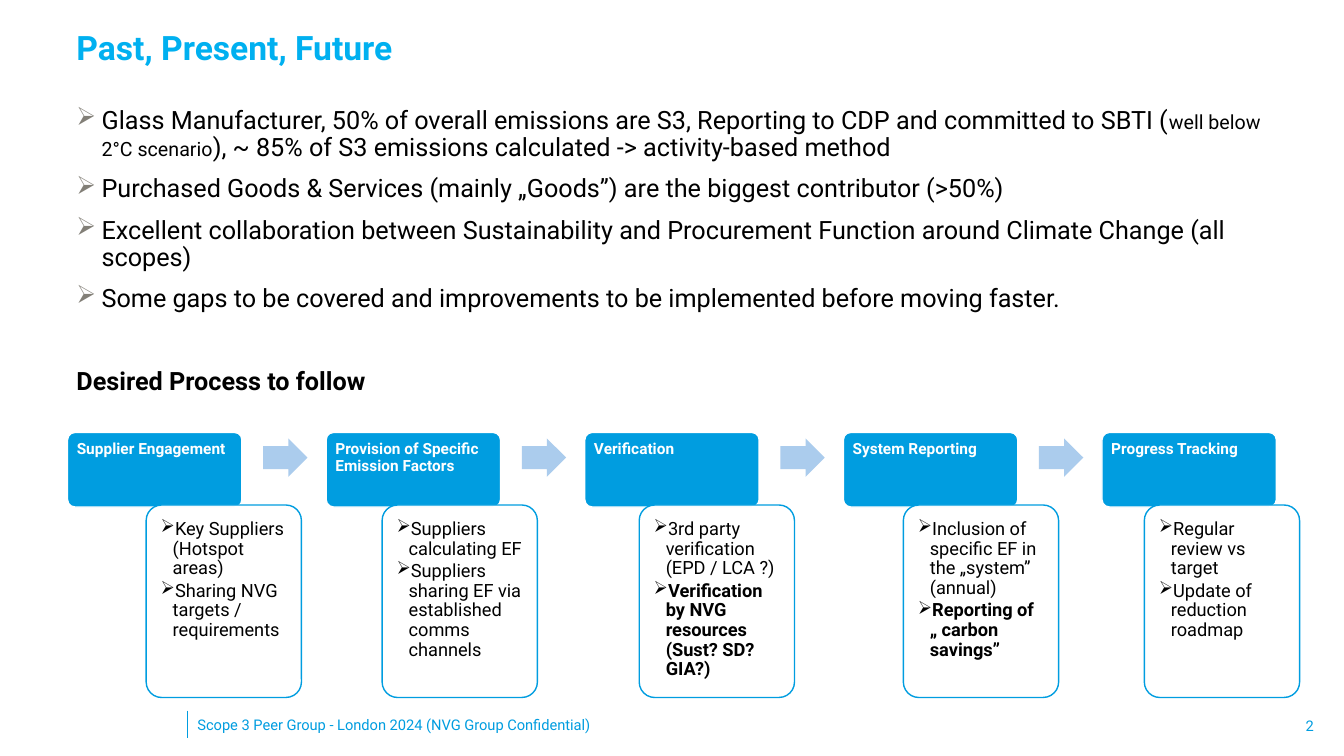
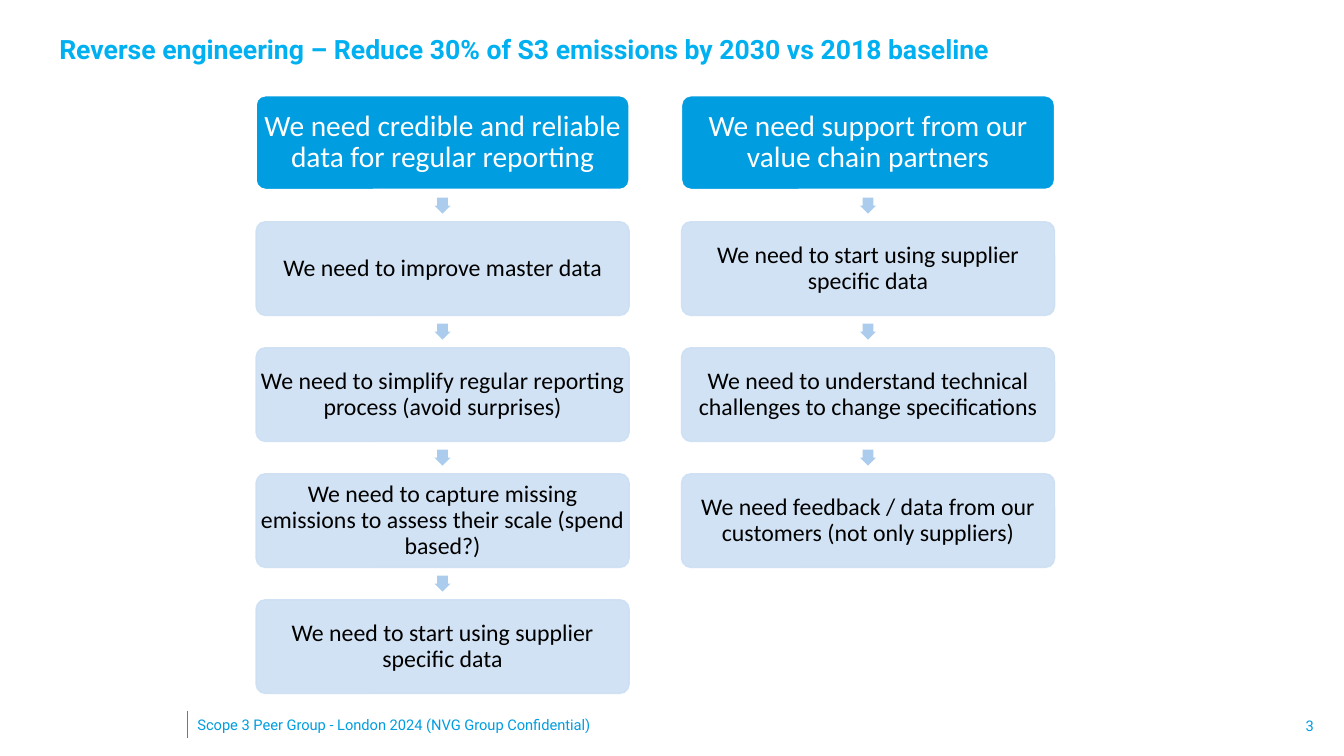
"""Build two slides on a supplier emissions process and its reverse-engineered steps."""
import pptx
import pptx.util
import pptx.dml.color
import pptx.enum.shapes
import pptx.enum.text
import pptx.oxml.ns
from lxml import etree

Inches = pptx.util.Inches
Pt = pptx.util.Pt
RGBColor = pptx.dml.color.RGBColor
SHAPES = pptx.enum.shapes.MSO_SHAPE
ALIGN = pptx.enum.text.PP_ALIGN
ANCHOR = pptx.enum.text.MSO_ANCHOR
qn = pptx.oxml.ns.qn

BLUE = RGBColor(0x00, 0x9D, 0xE0)
TITLE_BLUE = RGBColor(0x00, 0xB0, 0xF0)
ARROW_BLUE = RGBColor(0xAB, 0xCC, 0xED)
PALE_BLUE = RGBColor(0xCC, 0xDF, 0xF3)
GREY = RGBColor(0x82, 0x7F, 0x77)
BLACK = RGBColor(0x00, 0x00, 0x00)
WHITE = RGBColor(0xFF, 0xFF, 0xFF)
ROBOTO = "Roboto"
CALIBRI = "Calibri"

FOOTER = "Scope 3 Peer Group - London 2024 (NVG Group Confidential)"

KEY_POINTS = [
    ("Glass Manufacturer, 50% of overall emissions are S3, Reporting to CDP and committed to SBTI (",
     "well below 2°C scenario",
     "), ~ 85% of S3 emissions calculated -> activity-based method"),
    "Purchased Goods & Services (mainly „Goods”) are the biggest contributor (>50%)",
    "Excellent collaboration between Sustainability and Procurement Function around Climate Change (all scopes)",
    "Some gaps to be covered and improvements to be implemented before moving faster.",
]

PROCESS = [
    {"stage": "Supplier Engagement", "left": 1.45, "bold_last": False,
     "tasks": ["Key Suppliers (Hotspot areas)", "Sharing NVG targets / requirements"]},
    {"stage": "Provision of Specific Emission Factors", "left": 3.79, "bold_last": False,
     "tasks": ["Suppliers calculating EF", "Suppliers sharing EF via established comms channels"]},
    {"stage": "Verification", "left": 6.34, "bold_last": True,
     "tasks": ["3rd party verification (EPD / LCA ?)",
               "Verification by NVG resources (Sust? SD? GIA?)"]},
    {"stage": "System Reporting", "left": 8.96, "bold_last": True,
     "tasks": ["Inclusion of specific EF in the „system” (annual)",
               "Reporting of „ carbon savings”"]},
    {"stage": "Progress Tracking", "left": 11.35, "bold_last": False,
     "tasks": ["Regular review vs target", "Update of reduction roadmap"]},
]

NEEDS = [
    ["We need credible and reliable data for regular reporting",
     "We need to improve master data",
     "We need to simplify regular reporting process (avoid surprises)",
     "We need to capture missing emissions to assess their scale (spend based?)",
     "We need to start using supplier specific data"],
    ["We need support from our value chain partners",
     "We need to start using supplier specific data",
     "We need to understand technical challenges to change specifications",
     "We need feedback / data from our customers (not only suppliers)"],
]


def add_bullet(paragraph, indent, color):
    """Give a paragraph an arrowhead bullet with a hanging indent."""
    properties = paragraph._p.get_or_add_pPr()
    properties.set("marL", str(Inches(indent)))
    properties.set("indent", str(-Inches(indent)))
    bullet_color = etree.SubElement(properties, qn("a:buClr"))
    etree.SubElement(bullet_color, qn("a:srgbClr"), val=str(color))
    etree.SubElement(properties, qn("a:buChar"), char="➢")


def write(frame, paragraphs, size, color, font=ROBOTO, bold=False, align=ALIGN.LEFT,
          anchor=ANCHOR.TOP, margin=None, spacing=0.9, before=0, after=0,
          indent=None, bullet_color=BLACK):
    """Fill a text frame with evenly styled paragraphs."""
    frame.word_wrap = True
    frame.vertical_anchor = anchor
    if margin is not None:
        frame.margin_left = frame.margin_right = Inches(margin)
        frame.margin_top = frame.margin_bottom = Inches(margin)
    for index, pieces in enumerate(paragraphs):
        paragraph = frame.add_paragraph() if index else frame.paragraphs[0]
        if indent:
            add_bullet(paragraph, indent, bullet_color)
        paragraph.alignment = align
        paragraph.line_spacing = spacing
        paragraph.space_before = Pt(before if index else 0)
        paragraph.space_after = Pt(after)
        for piece in [pieces] if isinstance(pieces, str) else pieces:
            run = paragraph.add_run()
            run.text = piece
            run.font.size = Pt(size)
            run.font.name = font
            run.font.bold = bold
            run.font.color.rgb = color


def add_text(slide, box, paragraphs, size, color, **style):
    """Add a text box and return its frame."""
    frame = slide.shapes.add_textbox(*map(Inches, box)).text_frame
    write(frame, paragraphs, size, color, **style)
    return frame


def add_block(slide, kind, box, fill, line=None, adjustments=(0.1,), opacity=100):
    """Add a flat preset shape; opacity also reaches an outline of the fill colour."""
    block = slide.shapes.add_shape(kind, *map(Inches, box))
    block.shadow.inherit = False
    for index, value in enumerate(adjustments):
        block.adjustments[index] = value
    block.fill.solid()
    block.fill.fore_color.rgb = fill
    if line is None:
        block.line.fill.background()
    else:
        block.line.color.rgb = line
        block.line.width = Pt(1)
    if opacity < 100:
        for shade in block.element.spPr.iter(qn("a:srgbClr")):
            if shade.get("val") == str(fill):
                etree.SubElement(shade, qn("a:alpha"), val=str(opacity * 1000))
    return block


def add_slide(deck, number, title, title_box, title_size):
    """Add a blank slide with its title, footer and page number."""
    slide = deck.slides.add_slide(deck.slide_layouts[6])
    rule = slide.shapes.add_connector(
        pptx.enum.shapes.MSO_CONNECTOR.STRAIGHT,
        Inches(1.86), Inches(7.05), Inches(1.86), Inches(7.32))
    rule.line.color.rgb = BLUE
    rule.line.width = Pt(0.75)
    etree.SubElement(rule.element.spPr, qn("a:effectLst"))
    add_text(slide, title_box, [title], title_size, TITLE_BLUE, bold=True, anchor=ANCHOR.MIDDLE)
    small = {"size": 10.5, "color": BLUE, "anchor": ANCHOR.MIDDLE, "spacing": 1.0}
    add_text(slide, (1.86, 6.99, 4.5, 0.4), [FOOTER], **small)
    add_text(slide, (10.13, 7, 3, 0.4), [str(number)], align=ALIGN.RIGHT, **small)
    return slide


def build_process(deck):
    """Key points above a five-stage process."""
    slide = add_slide(deck, 2, "Past, Present, Future", (0.66, 0.27, 10.68, 0.45), 24)
    points = add_text(slide, (0.66, 1.02, 12.07, 2.43), KEY_POINTS, 18, BLACK,
                      before=10, indent=0.25, bullet_color=GREY)
    points.paragraphs[0].runs[1].font.size = Pt(14)
    add_text(slide, (0.66, 3.61, 12.07, 0.4), ["Desired Process to follow"], 18, BLACK, bold=True)

    first, last, top = 0.67, 10.93, 4.29
    pitch = (last - first) / (len(PROCESS) - 1)
    for index, step in enumerate(PROCESS):
        left = first + index * pitch
        stage = add_block(slide, SHAPES.ROUNDED_RECTANGLE, (left, top, 1.73, 0.74), BLUE, WHITE)
        write(stage.text_frame, [step["stage"]], 11, WHITE, bold=True, margin=0.07)
        tasks = add_block(slide, SHAPES.ROUNDED_RECTANGLE, (step["left"], 5.01, 1.54, 1.91),
                          WHITE, BLUE, opacity=90)
        write(tasks.text_frame, step["tasks"], 13, BLACK, margin=0.1, after=2, indent=0.12)
        if step["bold_last"]:
            tasks.text_frame.paragraphs[-1].runs[0].font.bold = True
        if index < len(PROCESS) - 1:
            add_block(slide, SHAPES.RIGHT_ARROW, (left + 1.94, top + 0.06, 0.44, 0.38),
                      ARROW_BLUE, adjustments=(0.6, 0.5))


def build_needs(deck):
    """Two columns of needs, each read from top to bottom."""
    slide = add_slide(deck, 3, "Reverse engineering – Reduce 30% of S3 emissions by 2030 vs 2018 baseline",
                      (0.49, 0.18, 11.73, 0.65), 19)
    width, height, arrow = 3.7, 0.93, 0.16
    for column, needs in enumerate(NEEDS):
        left = 2.54 + column * 4.22
        for row, need in enumerate(needs):
            top = 0.95 + row * 1.25
            box = (left, top, width, height)
            centred = {"font": CALIBRI, "align": ALIGN.CENTER, "anchor": ANCHOR.MIDDLE}
            if row == 0:
                goal = add_block(slide, SHAPES.ROUNDED_RECTANGLE, box, BLUE, WHITE)
                write(goal.text_frame, [need], 21, WHITE, margin=0.03, **centred)
            else:
                action = add_block(slide, SHAPES.ROUNDED_RECTANGLE, box, PALE_BLUE, PALE_BLUE, opacity=90)
                write(action.text_frame, [need], 17, BLACK, margin=0.02, **centred)
            if row < len(needs) - 1:
                add_block(slide, SHAPES.DOWN_ARROW,
                          (left + (width - arrow) / 2, top + 1.01, arrow, arrow),
                          ARROW_BLUE, adjustments=(0.67, 0.5))


def main():
    """Assemble and save the deck."""
    deck = pptx.Presentation()
    deck.slide_width = Inches(13.33)
    deck.slide_height = Inches(7.5)
    build_process(deck)
    build_needs(deck)
    deck.save("out.pptx")


if __name__ == "__main__":
    main()
